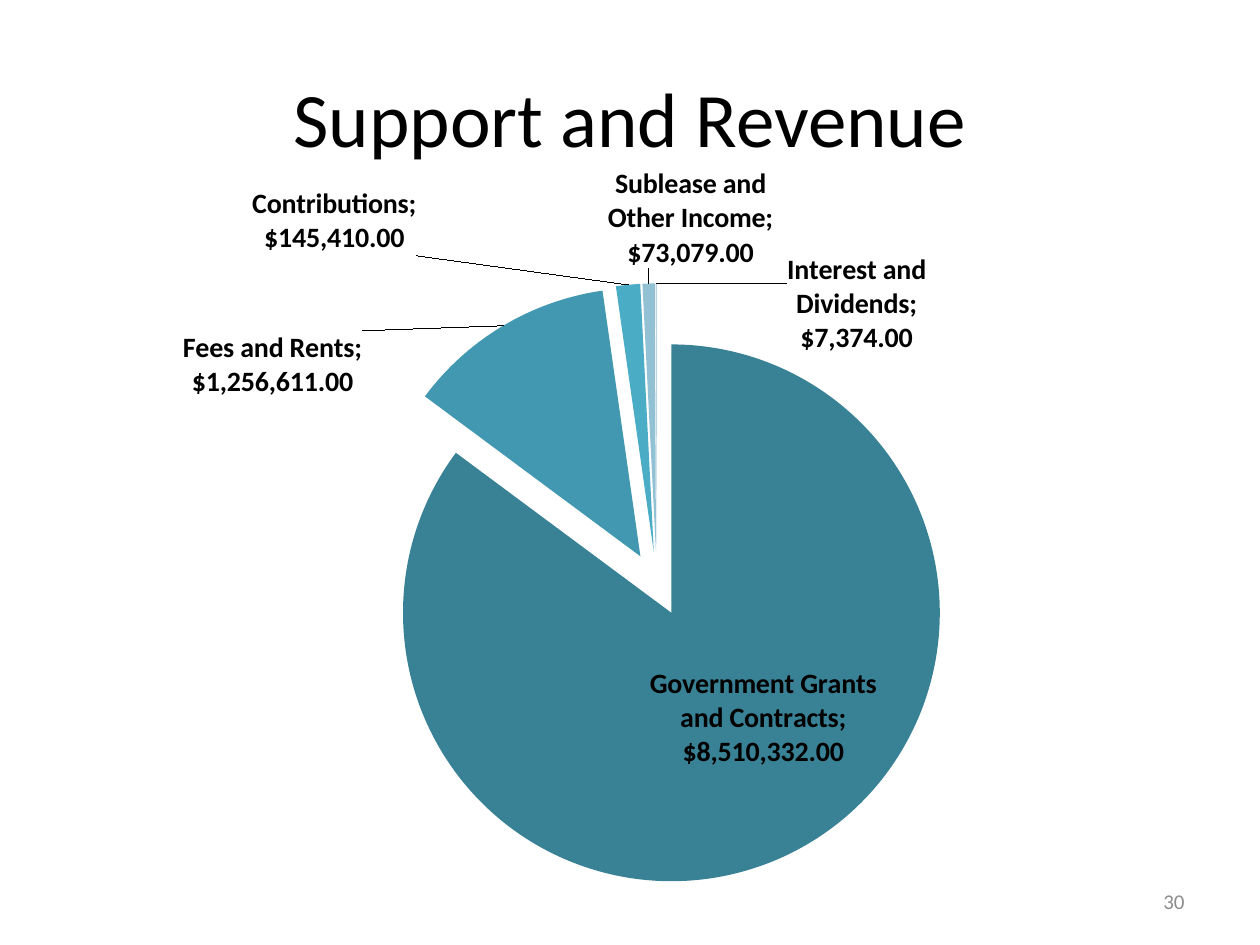
from lxml.etree import SubElement
from pptx import Presentation
from pptx.chart.data import CategoryChartData
from pptx.dml.color import RGBColor
from pptx.enum.chart import XL_CHART_TYPE, XL_LABEL_POSITION
from pptx.enum.text import MSO_ANCHOR, PP_ALIGN
from pptx.oxml import parse_xml
from pptx.oxml.ns import nsdecls, qn
from pptx.util import Inches, Pt

FONT = "Calibri"
MONEY = '"$"#,##0.00'
SOURCES = [
    ("Government Grants and Contracts", 8510332, "398296", (0.03, -0.02)),
    ("Fees and Rents", 1256611, "4298B1", (-0.13, 0.11)),
    ("Contributions", 145410, "4BACC6", (-0.2, -0.03)),
    ("Sublease and Other Income", 73079, "93C1D4", (0.04, -0.01)),
    ("Interest and Dividends", 7374, "B9D5E2", (0.19, 0.11)),
]


def color(value):
    """Turn a hex string into a colour."""
    return RGBColor.from_string(value)


def style_font(font, size, value, bold=False):
    """Set face, size, colour and weight of a font."""
    font.name = FONT
    font.size = Pt(size)
    font.bold = bold
    font.color.rgb = color(value)


def write_line(box, text, size, value, align):
    """Write one vertically centred line into a shape."""
    frame = box.text_frame
    frame.word_wrap = True
    frame.vertical_anchor = MSO_ANCHOR.MIDDLE
    para = frame.paragraphs[0]
    para.alignment = align
    span = para.add_run()
    span.text = text
    style_font(span.font, size, value)


def manual_layout(**settings):
    """Build a manual chart layout element."""
    layout = parse_xml(f"<c:layout {nsdecls('c')}><c:manualLayout/></c:layout>")
    for name, value in settings.items():
        SubElement(layout[0], qn(f"c:{name}")).set("val", str(value))
    return layout


def place_plot(chart):
    """Fix the inner plot area inside the chart frame."""
    plot_area = chart.plots[0]._element.getparent()
    for old in plot_area.findall(qn("c:layout")):
        plot_area.remove(old)
    plot_area.insert(0, manual_layout(
        layoutTarget="inner", xMode="edge", yMode="edge",
        x=0.21, y=0.16, w=0.63, h=0.83))


def explode(series, percent):
    """Move all slices away from the centre."""
    explosion = parse_xml(f'<c:explosion {nsdecls("c")} val="{percent}"/>')
    series._element.find(qn("c:tx")).addnext(explosion)


def style_labels(series):
    """Show category and value on every slice."""
    labels = series.data_labels
    labels.show_category_name = True
    labels.show_value = True
    labels.show_percentage = False
    labels.number_format = MONEY
    labels.number_format_is_linked = False
    style_font(labels.font, 16, "000000", True)


def style_slice(point, fill, offset, position):
    """Colour a slice and move its label by a share of the chart size."""
    point.format.fill.solid()
    point.format.fill.fore_color.rgb = color(fill)
    point.format.line.fill.background()
    label = point.data_label
    style_font(label.font, 16, "000000", True)
    label.position = position
    element = label._dLbl
    element.find(qn("c:showCatName")).set("val", "1")
    element.find(qn("c:showPercent")).set("val", "0")
    layout = manual_layout(x=offset[0], y=offset[1])
    element.find(qn("c:idx")).addnext(layout)
    number_format = parse_xml(f'<c:numFmt {nsdecls("c")} sourceLinked="0"/>')
    number_format.set("formatCode", MONEY)
    layout.addnext(number_format)
    separator = parse_xml(f"<c:separator {nsdecls('c')}>; </c:separator>")
    element.find(qn("c:showBubbleSize")).addnext(separator)


def add_revenue_pie(page):
    """Add the exploded pie of revenue sources."""
    data = CategoryChartData(number_format=MONEY)
    data.categories = [name for name, *_ in SOURCES]
    data.add_series("Series 1", [amount for _, amount, *_ in SOURCES])
    chart = page.shapes.add_chart(
        XL_CHART_TYPE.PIE, Inches(0.82), Inches(1.33),
        Inches(8.37), Inches(5.75), data).chart
    chart.has_legend = False
    chart.has_title = False
    style_font(chart.font, 10, "000000")
    place_plot(chart)
    plot = chart.plots[0]
    plot.vary_by_categories = True
    series = plot.series[0]
    style_labels(series)
    explode(series, 12)
    for index, (_, _, fill, offset) in enumerate(SOURCES):
        position = XL_LABEL_POSITION.OUTSIDE_END if index else XL_LABEL_POSITION.CENTER
        style_slice(series.points[index], fill, offset, position)
    for leader in series._element.iter(qn("c:showLeaderLines")):
        leader.set("val", "1")


def main():
    """Build the support and revenue slide."""
    deck = Presentation()
    deck.slide_width, deck.slide_height = Inches(10), Inches(7.5)
    page = deck.slides.add_slide(deck.slide_layouts[5])
    title = page.shapes.title
    title.left, title.top = Inches(0.5), Inches(0.3)
    title.width, title.height = Inches(9), Inches(1.25)
    write_line(title, "Support and Revenue", 44, "000000", PP_ALIGN.CENTER)
    number = page.shapes.add_textbox(
        Inches(7.17), Inches(6.95), Inches(2.33), Inches(0.4))
    write_line(number, "30", 12, "8C8C8C", PP_ALIGN.RIGHT)
    add_revenue_pie(page)
    deck.save("out.pptx")


if __name__ == "__main__":
    main()
